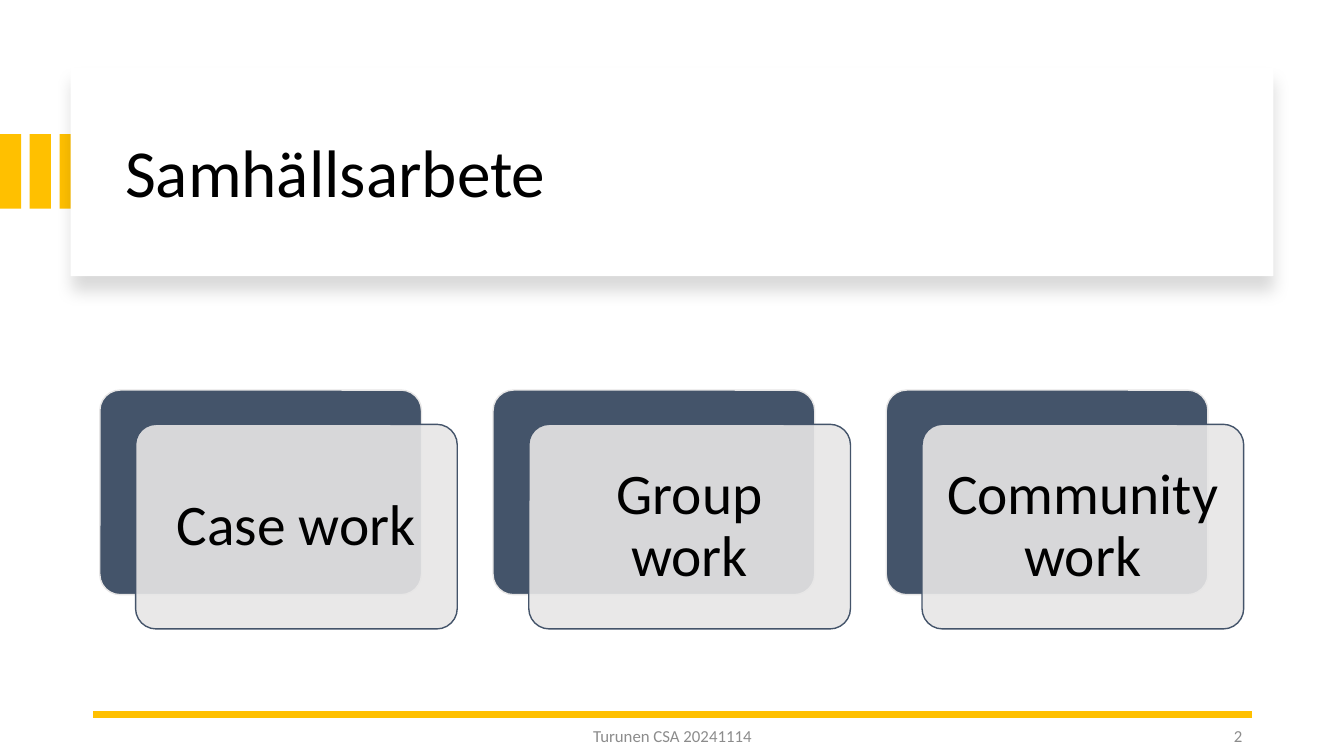
"""Build the Samhällsarbete slide with its three overlapping cards."""
from dataclasses import dataclass
from typing import Any, Optional

from lxml.etree import SubElement
from pptx import Presentation
from pptx.dml.color import RGBColor
from pptx.enum.shapes import MSO_CONNECTOR, MSO_SHAPE
from pptx.enum.text import MSO_ANCHOR, PP_ALIGN
from pptx.oxml import parse_xml
from pptx.oxml.ns import nsdecls, qn
from pptx.util import Inches, Pt

GOLD = RGBColor(0xFF, 0xC0, 0x00)
WHITE = RGBColor(0xFF, 0xFF, 0xFF)
BLACK = RGBColor(0x00, 0x00, 0x00)
GRAY = RGBColor(0x8C, 0x8C, 0x8C)
SLATE = RGBColor(0x44, 0x54, 0x6A)
SILVER = RGBColor(0xE7, 0xE6, 0xE6)
FONT_NAME = "Calibri"
CARD_LABELS = ("Case work", "Group work", "Community work")
CARD_LEFT, CARD_TOP, CARD_PITCH = 0.99, 3.87, 3.9
CARD_WIDTH, CARD_HEIGHT = 3.19, 2.03
FRONT_SHIFT_X, FRONT_SHIFT_Y = 0.355, 0.34
LABEL_MARGIN = 0.06
STRIPE_PITCH = 0.295


@dataclass(frozen=True)
class Box:
    """Place and size in inches."""
    left: float
    top: float
    width: float
    height: float

    def lengths(self) -> tuple:
        """Return the four values as slide lengths."""
        return tuple(Inches(v) for v in (self.left, self.top, self.width, self.height))


@dataclass(frozen=True)
class Caption:
    """Text with its place and look."""
    text: str
    box: Box
    size: float
    color: RGBColor
    align: PP_ALIGN
    line_spacing: float = 1.0
    space_after: float = 0
    inset: Optional[float] = None


def set_attributes(target: Any, values: dict) -> None:
    """Set every named attribute on the target."""
    for name, value in values.items():
        setattr(target, name, value)


def write_text(shape: Any, caption: Caption) -> None:
    """Write and format a caption inside a shape."""
    frame = shape.text_frame
    frame.text = caption.text
    set_attributes(frame, {"word_wrap": True, "vertical_anchor": MSO_ANCHOR.MIDDLE})
    if caption.inset is not None:
        sides = ("margin_left", "margin_top", "margin_right", "margin_bottom")
        set_attributes(frame, dict.fromkeys(sides, Inches(caption.inset)))
    paragraph = frame.paragraphs[0]
    set_attributes(paragraph, {
        "alignment": caption.align,
        "line_spacing": caption.line_spacing,
        "space_after": Pt(caption.space_after),
    })
    set_attributes(paragraph.font, {"name": FONT_NAME, "size": Pt(caption.size)})
    paragraph.font.color.rgb = caption.color


def add_caption(slide: Any, caption: Caption) -> None:
    """Add a text box holding a caption."""
    write_text(slide.shapes.add_textbox(*caption.box.lengths()), caption)


def add_block(slide: Any, kind: MSO_SHAPE, box: Box, fill: RGBColor,
              line: Optional[RGBColor] = None) -> Any:
    """Add a filled shape without a shadow."""
    shape = slide.shapes.add_shape(kind, *box.lengths())
    shape.shadow.inherit = False
    shape.fill.solid()
    shape.fill.fore_color.rgb = fill
    if line is None:
        shape.line.fill.background()
    else:
        shape.line.color.rgb = line
        shape.line.width = Pt(1)
    return shape


def add_header(slide: Any) -> None:
    """Add the gold stripes, the raised panel and the title."""
    for index in range(3):
        stripe = Box(index * STRIPE_PITCH, 1.33, 0.21, 0.74)
        add_block(slide, MSO_SHAPE.RECTANGLE, stripe, GOLD)
    panel = add_block(slide, MSO_SHAPE.RECTANGLE, Box(0.7, 0.67, 11.93, 2.07), WHITE)
    effects = panel.element.spPr.find(qn("a:effectLst"))
    effects.append(parse_xml(
        f'<a:outerShdw {nsdecls("a")} blurRad="{Pt(11)}" dist="{Pt(10)}" dir="5400000" '
        'algn="t" rotWithShape="0"><a:srgbClr val="000000"><a:alpha val="15000"/>'
        '</a:srgbClr></a:outerShdw>'))
    title = slide.shapes.title
    box = Box(1.14, 0.89, 11.13, 1.7)
    set_attributes(title, dict(zip(("left", "top", "width", "height"), box.lengths())))
    write_text(title, Caption("Samhällsarbete", box, 48, BLACK, PP_ALIGN.LEFT, 0.9))
    panel.element.addnext(title.element)


def add_footer(slide: Any) -> None:
    """Add the gold rule, the footer text and the slide number."""
    rule = slide.shapes.add_connector(
        MSO_CONNECTOR.STRAIGHT, Inches(12.42), Inches(7.09), Inches(0.92), Inches(7.09))
    rule.line.color.rgb = GOLD
    rule.line.width = Pt(4.5)
    SubElement(rule.element.spPr, qn("a:effectLst"))
    for text, left, width, align in (
            ("Turunen CSA 20241114", 4.42, 4.5, PP_ALIGN.CENTER),
            ("2", 9.42, 3, PP_ALIGN.RIGHT)):
        box = Box(left, 7.1, width, 0.4)
        add_caption(slide, Caption(text, box, 12, GRAY, align, space_after=6))


def add_card(slide: Any, label: str, left: float) -> None:
    """Add a dark back card, a translucent front card and its label."""
    back = Box(left, CARD_TOP, CARD_WIDTH, CARD_HEIGHT)
    front = Box(left + FRONT_SHIFT_X, CARD_TOP + FRONT_SHIFT_Y, CARD_WIDTH, CARD_HEIGHT)
    for box, fill, line in ((back, SLATE, SILVER), (front, SILVER, SLATE)):
        card = add_block(slide, MSO_SHAPE.ROUNDED_RECTANGLE, box, fill, line)
        card.adjustments[0] = 0.1
    color = card.element.spPr.find(qn("a:solidFill")).find(qn("a:srgbClr"))
    SubElement(color, qn("a:alpha"), val="90000")
    area = Box(front.left + LABEL_MARGIN, front.top + LABEL_MARGIN,
               CARD_WIDTH - 2 * LABEL_MARGIN, CARD_HEIGHT - 2 * LABEL_MARGIN)
    add_caption(slide, Caption(label, area, 41, BLACK, PP_ALIGN.CENTER, 0.9, inset=0.17))


def main() -> None:
    """Build and save the presentation."""
    presentation = Presentation()
    set_attributes(presentation, {"slide_width": Inches(13.33), "slide_height": Inches(7.5)})
    slide = presentation.slides.add_slide(presentation.slide_layouts[5])
    add_header(slide)
    add_footer(slide)
    for index, label in enumerate(CARD_LABELS):
        add_card(slide, label, CARD_LEFT + index * CARD_PITCH)
    presentation.save("out.pptx")


if __name__ == "__main__":
    main()
